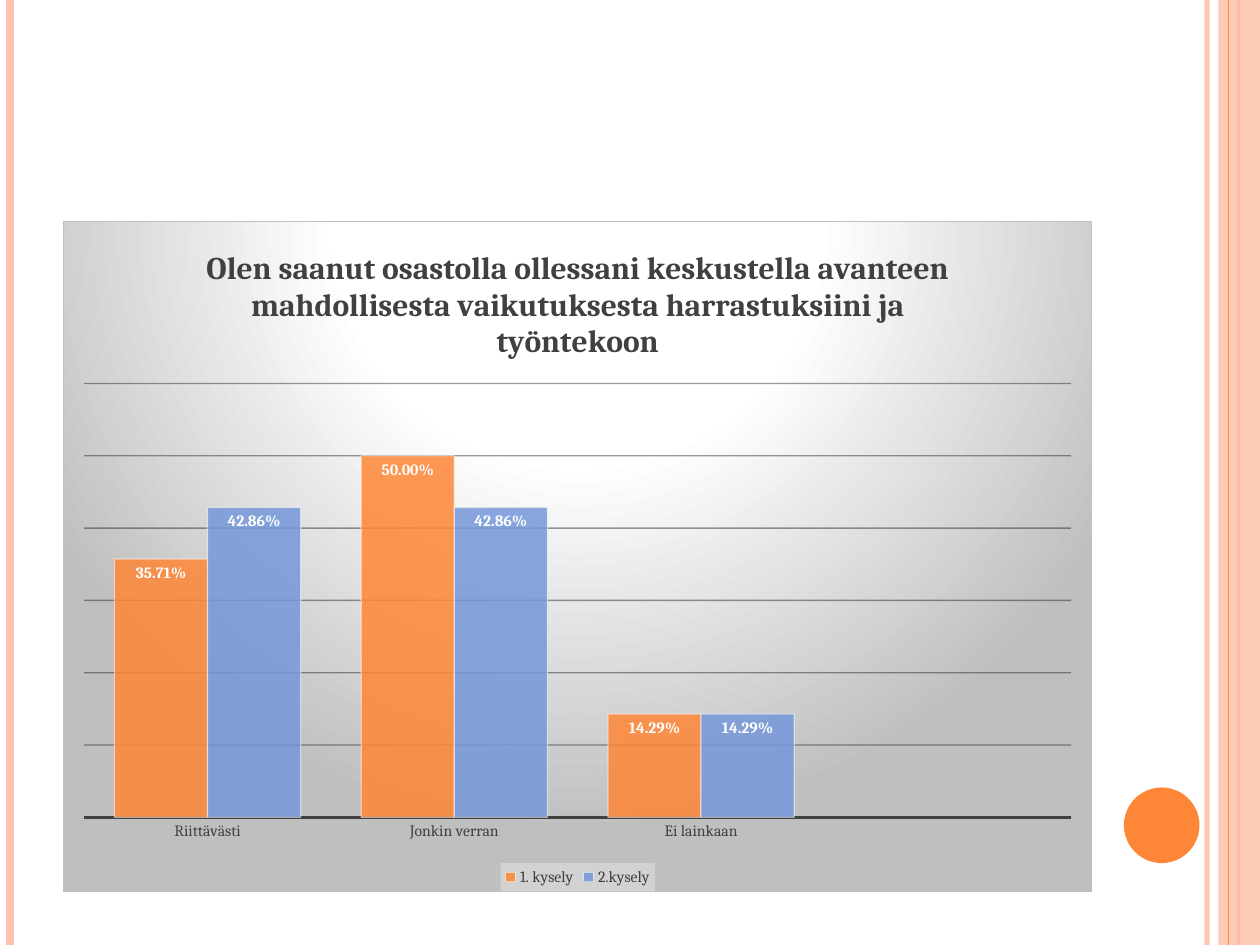
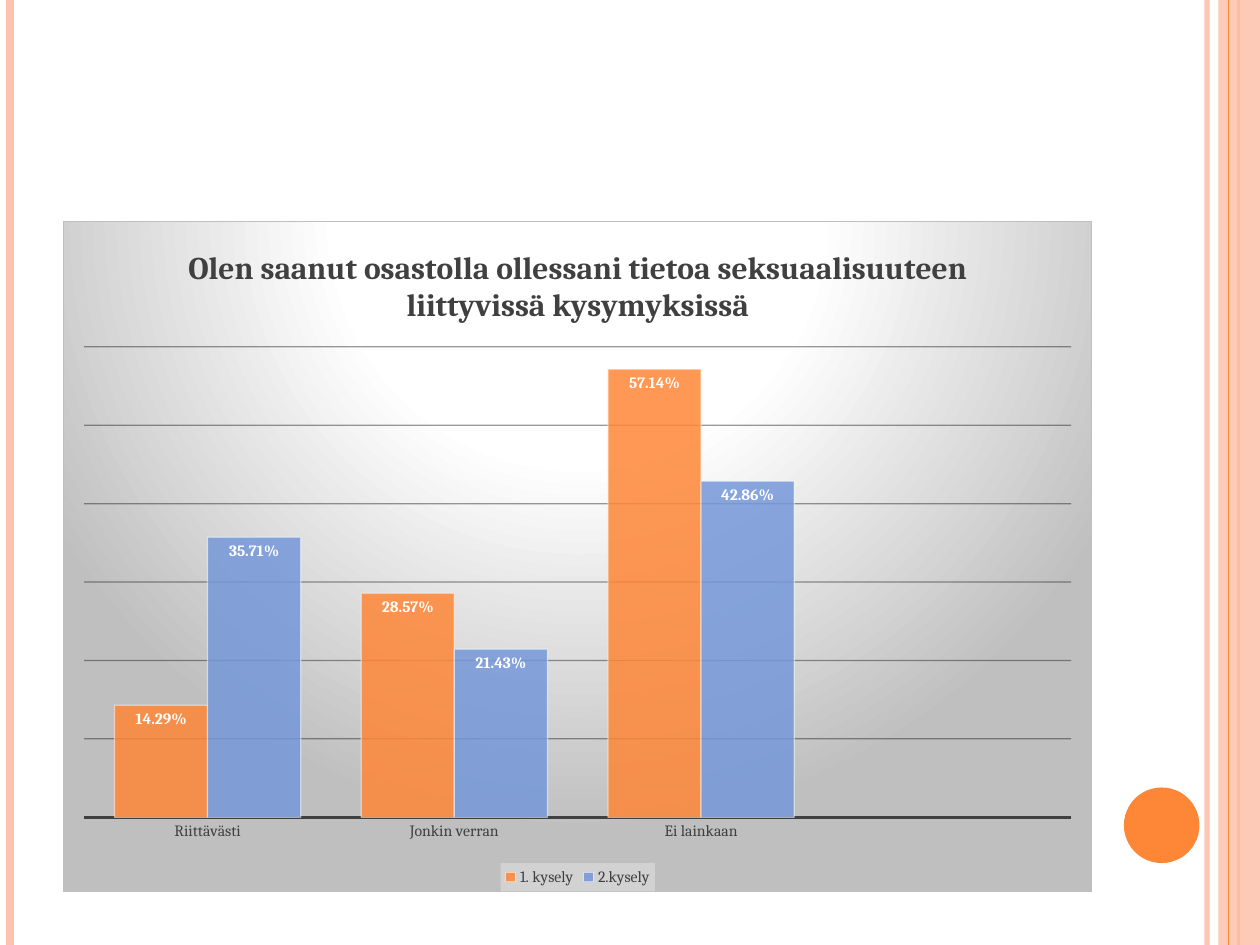
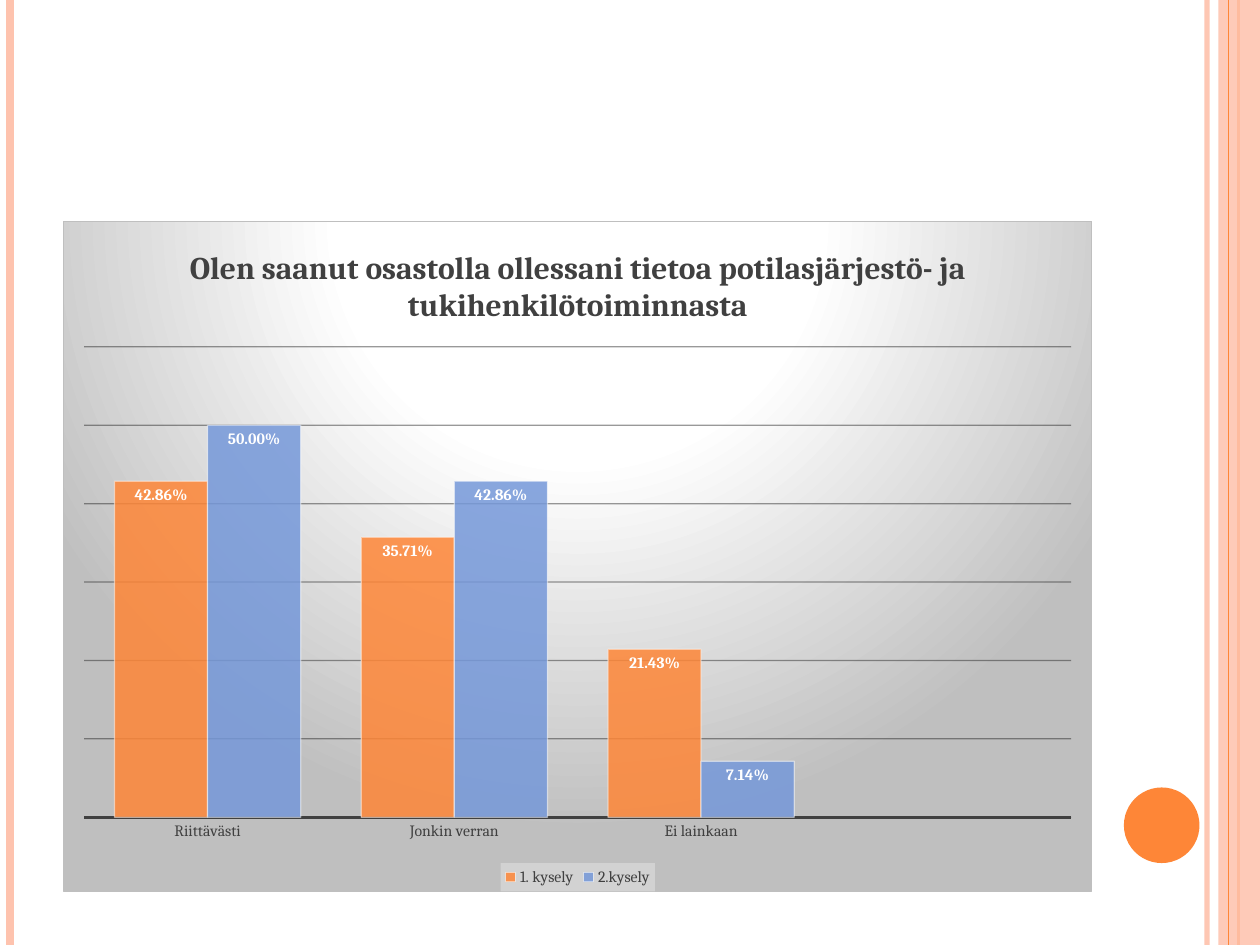
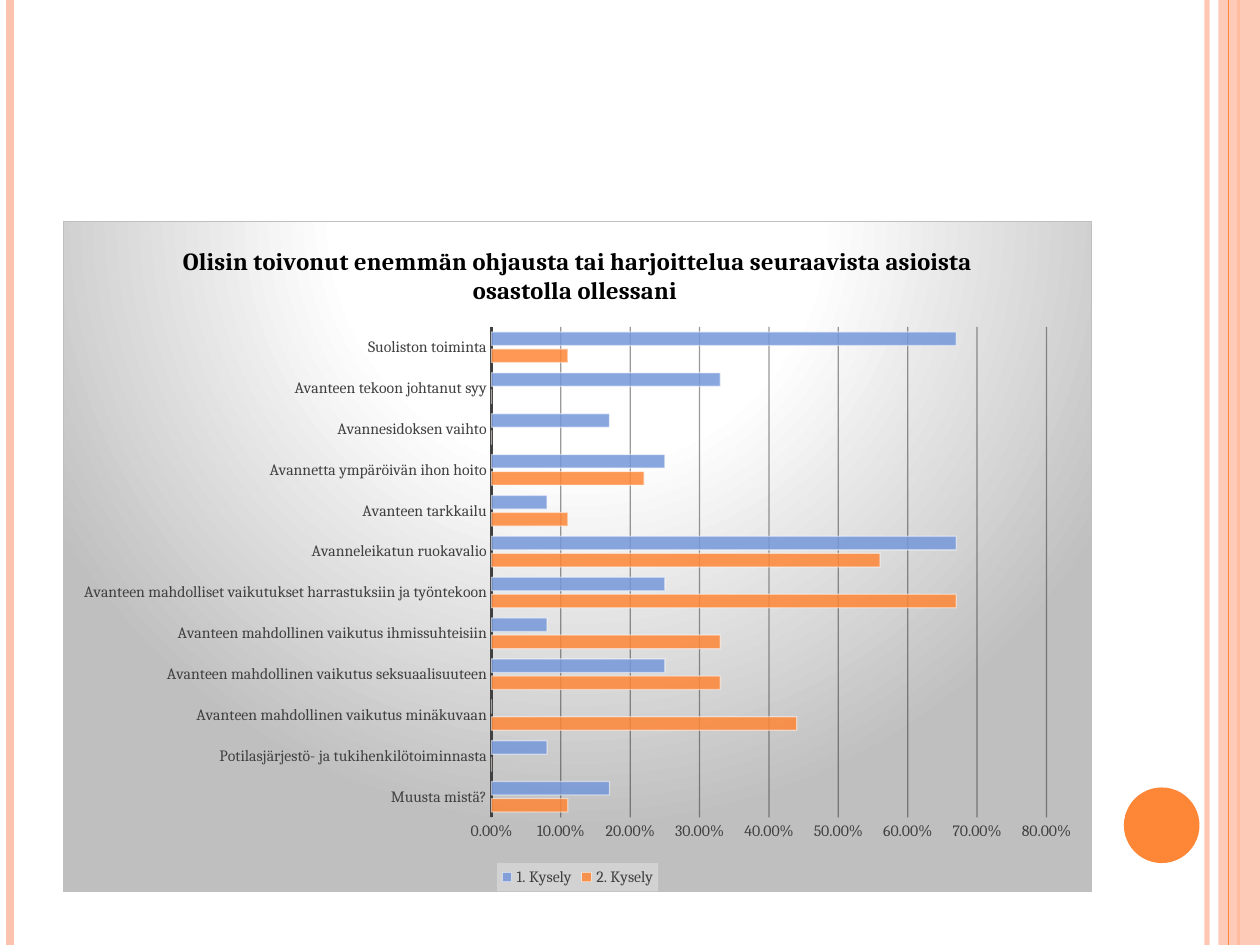
from lxml.etree import SubElement
from pptx import Presentation
from pptx.chart.data import CategoryChartData
from pptx.dml.color import RGBColor
from pptx.enum.chart import XL_CHART_TYPE, XL_LABEL_POSITION, XL_LEGEND_POSITION, XL_TICK_MARK
from pptx.enum.shapes import MSO_CONNECTOR, MSO_SHAPE
from pptx.oxml import parse_xml
from pptx.oxml.ns import nsdecls, qn
from pptx.util import Inches, Pt

FONT = "Cambria"
ORANGE, PEACH, BLUE, RED = "FE8637", "FEC3AE", "7598D9", "B32C16"
WHITE, DARK, BLACK = "FFFFFF", "404040", "000000"
PERCENT = "0.00%"

CHART_STYLE = """
<a:gradFill rotWithShape="1">
  <a:gsLst>
    <a:gs pos="0"><a:srgbClr val="FFFFFF"/></a:gs>
    <a:gs pos="39000"><a:srgbClr val="FFFFFF"/></a:gs>
    <a:gs pos="100000"><a:srgbClr val="BFBFBF"/></a:gs>
  </a:gsLst>
  <a:path path="circle"><a:fillToRect l="50000" t="-80000" r="50000" b="180000"/></a:path>
</a:gradFill>
<a:ln w="9525"><a:solidFill><a:srgbClr val="BFBFBF"/></a:solidFill></a:ln>"""
LEGEND_STYLE = """
<a:solidFill><a:srgbClr val="F2F2F2"><a:alpha val="39000"/></a:srgbClr></a:solidFill>
<a:ln><a:noFill/></a:ln>"""
GRID_FILL = f"""
<a:gradFill {nsdecls('a')}>
  <a:gsLst>
    <a:gs pos="0"><a:srgbClr val="0D0D0D"><a:alpha val="42000"/></a:srgbClr></a:gs>
    <a:gs pos="100000"><a:srgbClr val="BFBFBF"><a:alpha val="36000"/></a:srgbClr></a:gs>
  </a:gsLst>
  <a:lin ang="5400000" scaled="0"/>
</a:gradFill>"""


def paint(fill, color, opacity=100):
    """Give a fill, line fill or font fill a solid colour."""
    fill.solid()
    fill.fore_color.rgb = RGBColor.from_string(color)
    if opacity < 100:
        solid = fill._xPr.find(qn("a:solidFill"))
        SubElement(solid[0], qn("a:alpha"), val=str(opacity * 1000))


def style_area(element, style):
    """Put a background in front of the text properties of a chart part."""
    properties = parse_xml(f"<c:spPr {nsdecls('c', 'a')}>{style}</c:spPr>")
    element.find(qn("c:txPr")).addprevious(properties)


# Content: title, title size, title colour, chart type, categories, series, axis maximum
answers = ["Riittävästi", "Jonkin verran", "Ei lainkaan", ""]
topics = [
    "Muusta mistä?",
    "Potilasjärjestö- ja tukihenkilötoiminnasta",
    "Avanteen mahdollinen vaikutus minäkuvaan",
    "Avanteen mahdollinen vaikutus seksuaalisuuteen",
    "Avanteen mahdollinen vaikutus ihmissuhteisiin",
    "Avanteen mahdolliset vaikutukset harrastuksiin ja työntekoon",
    "Avanneleikatun ruokavalio",
    "Avanteen tarkkailu",
    "Avannetta ympäröivän ihon hoito",
    "Avannesidoksen vaihto",
    "Avanteen tekoon johtanut syy",
    "Suoliston toiminta",
]
column_questions = [
    ("Olen saanut osastolla ollessani keskustella avanteen mahdollisesta "
     "vaikutuksesta harrastuksiini ja työntekoon",
     [0.3571, 0.5, 0.1429, None], [0.4286, 0.4286, 0.1429, None]),
    ("Olen saanut osastolla ollessani tietoa seksuaalisuuteen liittyvissä kysymyksissä",
     [0.1429, 0.2857, 0.5714, None], [0.3571, 0.2143, 0.4286, None]),
    ("Olen saanut osastolla ollessani tietoa potilasjärjestö- ja tukihenkilötoiminnasta",
     [0.4286, 0.3571, 0.2143, None], [0.5, 0.4286, 0.0714, None]),
]
pages = [
    (title, 18, DARK, XL_CHART_TYPE.COLUMN_CLUSTERED, answers,
     {"1. kysely": first, "2.kysely": second, "Sarake1": []}, 0.6)
    for title, first, second in column_questions
]
pages.append((
    "Olisin toivonut enemmän ohjausta tai harjoittelua seuraavista asioista osastolla ollessani ",
    14, BLACK, XL_CHART_TYPE.BAR_CLUSTERED, topics,
    {"2. Kysely": [0.11, 0, 0.44, 0.33, 0.33, 0.67, 0.56, 0.11, 0.22, 0, 0, 0.11],
     "1. Kysely": [0.17, 0.08, 0, 0.25, 0.08, 0.25, 0.67, 0.08, 0.25, 0.17, 0.33, 0.67]},
    0.8,
))

deck = Presentation()
deck.slide_width, deck.slide_height = Inches(10), Inches(7.5)
slides = [deck.slides.add_slide(deck.slide_layouts[6]) for _ in pages]

# Side bands and circle, drawn once and moved to the slide master
shapes = slides[0].shapes
decorations = []
for left, color, width, opacity in [
    (9.58, PEACH, 3, 93), (0.08, PEACH, 4.5, 100), (9.83, ORANGE, 1.5, 100), (9.75, ORANGE, 0.75, 100),
]:
    stripe = shapes.add_connector(
        MSO_CONNECTOR.STRAIGHT, Inches(left), Inches(0), Inches(left), Inches(7.5))
    stripe.line.width = Pt(width)
    paint(stripe.line.fill, color, opacity)
    SubElement(stripe.element.spPr, qn("a:effectLst"))
    decorations.append(stripe)

for kind, left, top, width, height, color, opacity in [
    (MSO_SHAPE.RECTANGLE, 9.67, 0, 0.33, 7.5, PEACH, 87),
    (MSO_SHAPE.OVAL, 8.92, 6.25, 0.6, 0.6, ORANGE, 100),
]:
    shape = shapes.add_shape(kind, Inches(left), Inches(top), Inches(width), Inches(height))
    shape.shadow.inherit = False
    paint(shape.fill, color, opacity)
    shape.line.fill.background()
    decorations.append(shape)

# The band covers every stripe but the last
decorations.insert(3, decorations.pop(4))
for number, shape in enumerate(decorations, start=101):
    shape.element.xpath(".//p:cNvPr")[0].set("id", str(number))
    deck.slide_master.shapes.element.append(shape.element)

# One chart per slide
for slide, (title, title_size, title_color, kind, categories, series_values, maximum) in zip(slides, pages):
    is_column = kind == XL_CHART_TYPE.COLUMN_CLUSTERED
    data = CategoryChartData(number_format=PERCENT)
    data.categories = categories
    for name, values in series_values.items():
        data.add_series(name, values)
    chart = slide.shapes.add_chart(
        kind, Inches(0.5), Inches(1.75), Inches(8.17), Inches(5.33), data).chart
    chart.font.size = Pt(10)
    chart.font.name = FONT
    paint(chart.font.fill, BLACK)
    style_area(chart.element, CHART_STYLE)

    # Title
    chart.has_title = True
    para = chart.chart_title.text_frame.paragraphs[0]
    span = para.add_run()
    span.text = title
    para.font.size = Pt(title_size)
    para.font.bold = True
    para.font.name = FONT
    paint(para.font.fill, title_color)
    if not is_column:
        span.font.size = Pt(title_size)

    # Legend
    chart.has_legend = True
    chart.legend.position = XL_LEGEND_POSITION.BOTTOM
    chart.legend.include_in_layout = False

    # Axes
    category_axis, value_axis = chart.category_axis, chart.value_axis
    for part in (chart.legend, category_axis.tick_labels, value_axis.tick_labels):
        part.font.size = Pt(9)
        part.font.name = FONT
        paint(part.font.fill, DARK)
    style_area(chart.legend._element, LEGEND_STYLE)
    for axis in (category_axis, value_axis):
        axis.major_tick_mark = axis.minor_tick_mark = XL_TICK_MARK.NONE
    category_axis.format.line.width = Pt(1.5)
    paint(category_axis.format.line.fill, DARK)
    value_axis.minimum_scale, value_axis.maximum_scale = 0, maximum
    value_axis.major_unit = 0.1
    value_axis.tick_labels.number_format = PERCENT
    value_axis.tick_labels.number_format_is_linked = False
    value_axis.format.line.fill.background()
    value_axis.visible = not is_column
    value_axis.has_major_gridlines = True
    grid = value_axis.major_gridlines.format.line
    grid.width = Pt(0.75)
    grid.fill._xPr.append(parse_xml(GRID_FILL))

    # Bars
    plot = chart.plots[0]
    plot.vary_by_categories = False
    plot.gap_width = 65 if is_column else 75
    plot.overlap = 0 if is_column else -25
    for series, color in zip(plot.series, (ORANGE, BLUE, RED)):
        paint(series.format.fill, color, 85)
        series.format.line.width = Pt(0.75)
        paint(series.format.line.fill, WHITE, 50)
        if is_column:
            labels = series.data_labels
            labels.show_value = True
            labels.position = XL_LABEL_POSITION.INSIDE_END
            labels.number_format = PERCENT
            labels.number_format_is_linked = False
            labels.font.size = Pt(9)
            labels.font.bold = True
            labels.font.name = FONT
            paint(labels.font.fill, WHITE)
        # A series without values takes no room in the groups or the legend
        if not series_values[series.name]:
            series._element.remove(series._element.find(qn("c:val")))

deck.save("out.pptx")
